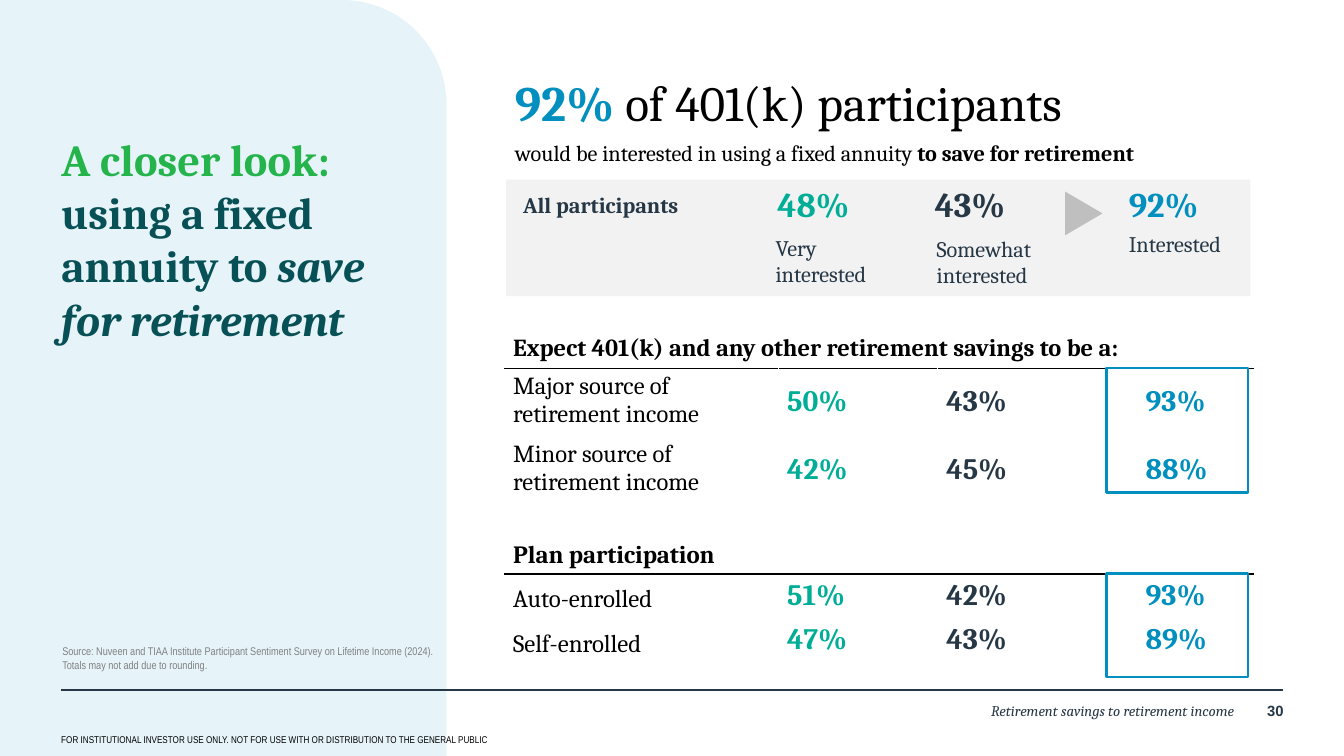
from lxml.etree import SubElement
from pptx import Presentation
from pptx.dml.color import RGBColor
from pptx.enum.shapes import MSO_CONNECTOR as Connector, MSO_SHAPE as Shape
from pptx.enum.text import MSO_ANCHOR as Anchor, PP_ALIGN as Align
from pptx.oxml import parse_xml
from pptx.oxml.ns import nsdecls, qn
from pptx.util import Pt

BLACK, WHITE, NAVY = "000000", "FFFFFF", "263746"
BLUE, TEAL, GREEN, PINE = "008FBE", "00AD97", "25B34B", "075156"
SHARE_COLORS = (TEAL, NAVY, BLUE)
TABLE_ROWS = (
    ("Expect 401(k) and any other retirement savings to be a:",),
    ("Major source of retirement income", "50%", "43%", "93%"),
    ("Minor source of retirement income", "42%", "45%", "88%"),
    ("Plan participation",),
    ("Auto-enrolled", "51%", "42%", "93%"),
    ("Self-enrolled", "47%", "43%", "89%"),
)
ROW_HEIGHTS = (31, 54, 54, 57, 35.5, 35.5)
COLUMN_WIDTHS = (221.8, 128.9, 161.3, 94.3)


def rgb(color):
    """Turn a hex string into a colour."""
    return RGBColor.from_string(color)


def style(size, color=BLACK, name="Cambria", **flags):
    """Collect the format values of a run."""
    return {"size": Pt(size), "name": name, "color": color, **flags}


def add_run(paragraph, text, look):
    """Add a run with the given format values."""
    run = paragraph.add_run()
    run.text = text
    for key, value in look.items():
        if key == "color":
            run.font.color.rgb = rgb(value)
        else:
            setattr(run.font, key, value)


def add_text(slide, place, *lines, align=Align.LEFT, anchor=Anchor.TOP, inset=(0, 0)):
    """Add a text box whose lines are lists of (text, style) runs."""
    frame = slide.shapes.add_textbox(*map(Pt, place)).text_frame
    side, end = map(Pt, inset)
    settings = {"word_wrap": True, "vertical_anchor": anchor, "margin_left": side,
                "margin_right": side, "margin_top": end, "margin_bottom": end}
    for key, value in settings.items():
        setattr(frame, key, value)
    for index, line in enumerate(lines):
        paragraph = frame.add_paragraph() if index else frame.paragraphs[0]
        paragraph.alignment = align
        for text, look in line:
            add_run(paragraph, text, look)


def add_block(slide, kind, place, fill=None, outline=None):
    """Add a preset shape with a plain fill or outline."""
    block = slide.shapes.add_shape(kind, *map(Pt, place))
    block.shadow.inherit = False
    if fill:
        block.fill.solid()
        block.fill.fore_color.rgb = rgb(fill)
    else:
        block.fill.background()
    if outline:
        block.line.color.rgb = rgb(outline)
        block.line.width = Pt(2)
    else:
        block.line.fill.background()
    return block


def add_rule(slide, left, right, top):
    """Add a horizontal rule."""
    rule = slide.shapes.add_connector(Connector.STRAIGHT, Pt(left), Pt(top), Pt(right), Pt(top))
    rule.line.color.rgb = rgb(NAVY)
    rule.line.width = Pt(2)
    SubElement(rule._element.spPr, qn("a:effectLst"))


def set_borders(cell, top, bottom):
    """Draw white side borders and coloured top and bottom borders."""
    properties = cell._tc.get_or_add_tcPr()
    edges = {"lnL": WHITE, "lnR": WHITE, "lnT": top, "lnB": bottom}
    for index, (edge, color) in enumerate(edges.items()):
        properties.insert(index, parse_xml(
            f'<a:{edge} {nsdecls("a")} w="12700"><a:solidFill>'
            f'<a:srgbClr val="{color}"/></a:solidFill></a:{edge}>'))


def fill_cell(cell, text, look, anchor):
    """Write one styled text into a table cell."""
    cell.vertical_anchor = anchor
    add_run(cell.text_frame.paragraphs[0], text, look)


def add_breakdown(slide):
    """Add the table of interest by income source and enrolment."""
    table = slide.shapes.add_table(len(TABLE_ROWS), len(COLUMN_WIDTHS), Pt(408.2), Pt(267.1),
                                   Pt(sum(COLUMN_WIDTHS)), Pt(sum(ROW_HEIGHTS))).table
    table.first_row = table.horz_banding = False
    for column, width in zip(table.columns, COLUMN_WIDTHS):
        column.width = Pt(width)
    for index, (row, height, texts) in enumerate(zip(table.rows, ROW_HEIGHTS, TABLE_ROWS)):
        row.height = Pt(height)
        heading = len(texts) == 1
        top = BLACK if index % 3 == 1 else WHITE
        for cell in row.cells:
            cell.fill.background()
            set_borders(cell, top, BLACK if heading else WHITE)
        enrolment = index >= 3
        label = style(20.1 if enrolment else 19.8, bold=heading)
        fill_cell(row.cells[0], texts[0], label, Anchor.BOTTOM if enrolment else Anchor.TOP)
        for cell, share, color in zip(list(row.cells)[1:], texts[1:], SHARE_COLORS):
            fill_cell(cell, share, style(24, color, bold=True),
                      Anchor.TOP if enrolment else Anchor.MIDDLE)
    table.cell(0, 0).merge(table.cell(0, 3))


def add_frame(slide):
    """Add the side panel, footer and title."""
    panel = add_block(slide, Shape.ROUND_1_RECTANGLE, (0, 0, 361.4, 612), "E6F4F9")
    panel.adjustments[0] = 0.234
    add_text(slide, (1010.2, 568, 28.8, 23.8),
             [("30", style(12, NAVY, "Arial", bold=True))], align=Align.RIGHT)
    add_text(slide, (383, 568, 616.3, 28.8),
             [("Retirement savings to retirement income", style(12, NAVY, italic=True))],
             align=Align.RIGHT)
    add_rule(slide, 49.7, 1038.2, 558.7)
    add_text(slide, (42.5, 590.4, 795.6, 17.3),
             [("FOR INSTITUTIONAL INVESTOR USE ONLY. NOT FOR USE WITH OR DISTRIBUTION TO "
               "THE GENERAL PUBLIC", style(8, name="Arial Narrow"))], inset=(7.2, 3.6))
    add_text(slide, (49.7, 106.6, 277.2, 218.2),
             [("A closer look: ", style(36, GREEN, bold=True)),
              ("using a fixed annuity to ", style(36, PINE, bold=True)),
              ("save for retirement", style(36, PINE, bold=True, italic=True))])


def add_summary(slide):
    """Add the headline and the band for all participants."""
    add_block(slide, Shape.RECTANGLE, (409.7, 145.4, 602.6, 94.3), "F2F2F2")
    add_text(slide, (409.7, 54.7, 602.6, 55.4),
             [("92% ", style(40, BLUE, bold=True)), ("of 401(k) participants", style(40))],
             inset=(7.2, 3.6))
    add_text(slide, (416.9, 113, 634.3, 53.3),
             [("would be interested in using a fixed annuity ", style(18)),
              ("to save for retirement", style(18, bold=True))])
    add_text(slide, (423.4, 154.8, 161.3, 31),
             [("All participants", style(18, NAVY, bold=True))])
    answers = (
        ("48%", 629.3, "Very interested", (627.8, 189.4, 103, 31)),
        ("43%", 756.7, "Somewhat interested", (758.2, 190.1, 136.1, 23)),
        ("92%", 913.7, "Interested", (913.7, 186.5, 126, 19.4)),
    )
    for (share, left, answer, place), color in zip(answers, SHARE_COLORS):
        add_text(slide, (left, 148.3, 101.5, 38.9), [(share, style(28, color, bold=True))])
        add_text(slide, place, [(answer, style(18, NAVY))])
    pointer = add_block(slide, Shape.ISOSCELES_TRIANGLE, (859.7, 157.7, 35.3, 30.2), "BFBFBF")
    pointer.rotation = 90


def main():
    """Build the slide and save it."""
    deck = Presentation()
    deck.slide_width, deck.slide_height = Pt(1087.92), Pt(612)
    slide = deck.slides.add_slide(deck.slide_layouts[6])
    add_frame(slide)
    add_summary(slide)
    add_breakdown(slide)
    for top, height in ((298.1, 100.8), (464.4, 83.5)):
        add_block(slide, Shape.RECTANGLE, (895.7, top, 114.5, height), outline=BLUE)
    note = style(9, "808080", "Arial Narrow")
    add_text(slide, (50.4, 514.1, 634.3, 29.5),
             [("Source: Nuveen and TIAA Institute Participant Sentiment Survey on "
               "Lifetime Income (2024).", note)],
             [("Totals may not add due to rounding.", note)], anchor=Anchor.BOTTOM)
    deck.save("out.pptx")


if __name__ == "__main__":
    main()
